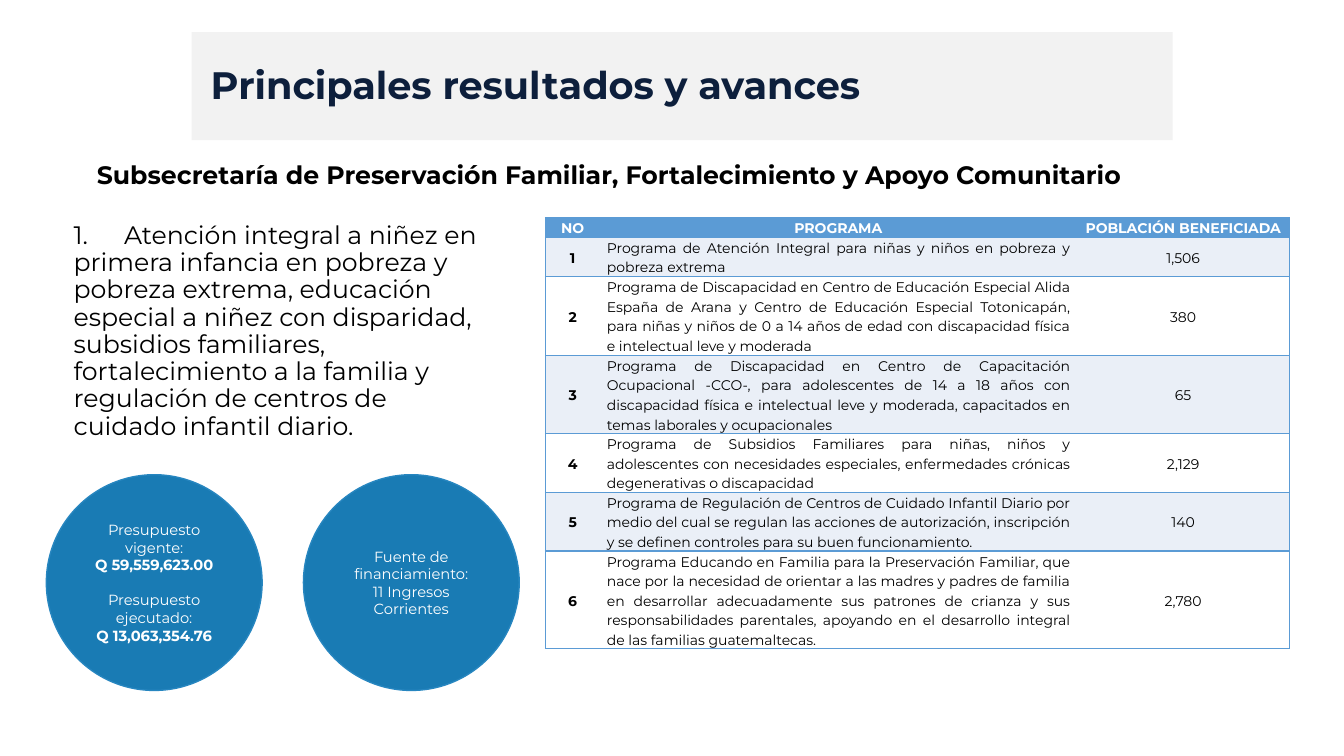
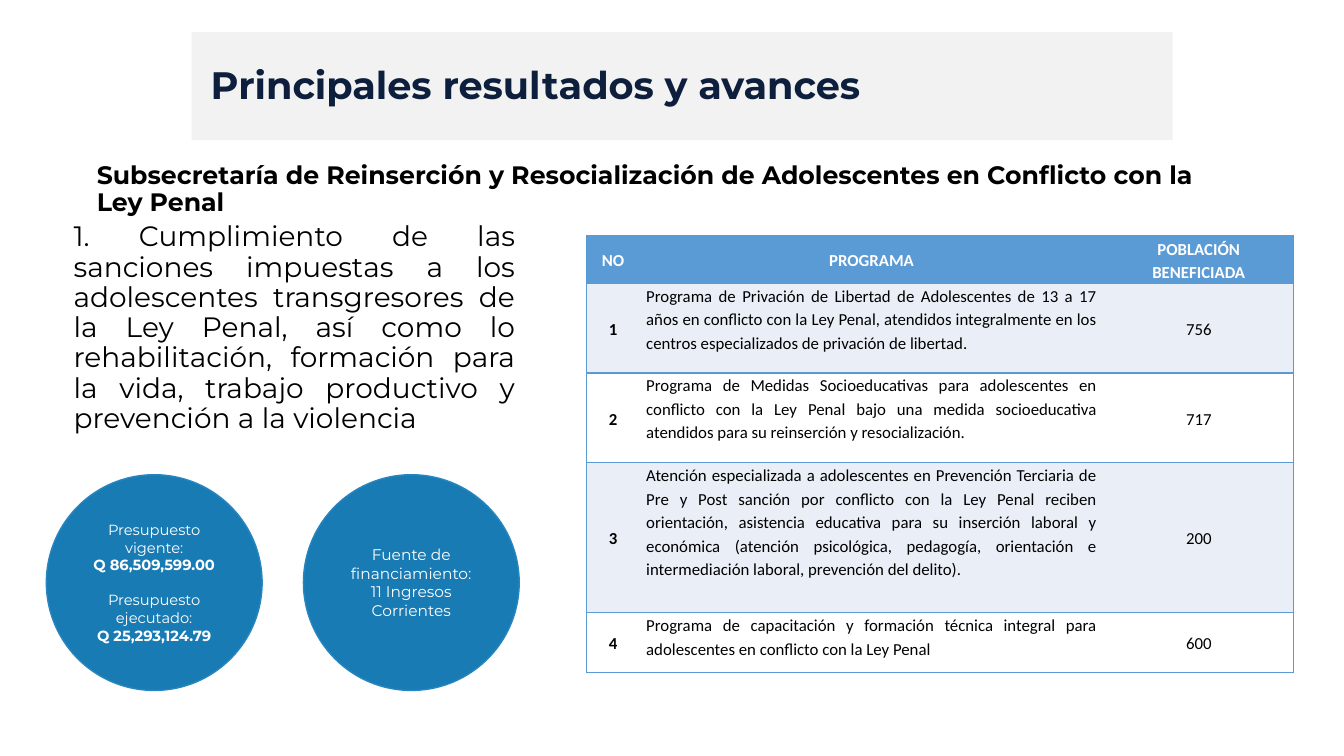
"""Build two slides on results, budgets and people served."""
from lxml import etree
from pptx import Presentation
from pptx import util as u
from pptx.dml.color import RGBColor
from pptx.enum import shapes, text
from pptx.oxml import ns

HUES = {
    "band": "F2F2F2", "title": "0D1F3C", "text": "000000", "white": "FFFFFF",
    "disc": "197BB4", "rim": "2786C0", "grid": "5B9BD5", "tint": "EAEFF7",
}
FACE = "Montserrat"
MID, TOP = text.MSO_ANCHOR.MIDDLE, text.MSO_ANCHOR.TOP
LEFT, CENTER, JUST = text.PP_ALIGN.LEFT, text.PP_ALIGN.CENTER, text.PP_ALIGN.JUSTIFY
HEADS = ["NO", "PROGRAMA", "POBLACIÓN BENEFICIADA"]

FAMILY = {
    "head": "Subsecretaría de Preservación Familiar, Fortalecimiento y Apoyo Comunitario",
    "point": "1.\tAtención integral a niñez en primera infancia en pobreza y pobreza extrema, educación especial a niñez con disparidad, subsidios familiares, fortalecimiento a la familia y regulación de centros de cuidado infantil diario.",
    "point_box": (0.63, 2.16, 4.32, 2.28), "point_size": 18, "align": LEFT,
    "sums": ("Q 59,559,623.00", "Q 13,063,354.76"), "fund_size": 10.5,
    "grid_at": (5.41, 2.16), "cols": [0.54, 4.73, 2.11],
    "tall": [0.19, 0.39, 0.78, 0.78, 0.58, 0.58, 0.97],
    "face": FACE, "size": 10, "anchor": MID,
    "rows": [
        ("Programa de Atención Integral para niñas y niños en pobreza y pobreza extrema", "1,506"),
        ("Programa de Discapacidad en Centro de Educación Especial Alida España de Arana y Centro de Educación Especial Totonicapán, para niñas y niños de 0 a 14 años de edad con discapacidad física e intelectual leve y moderada", "380"),
        ("Programa de Discapacidad en Centro de Capacitación Ocupacional -CCO-, para adolescentes de 14 a 18 años con discapacidad física e intelectual leve y moderada, capacitados en temas laborales y ocupacionales", "65"),
        ("Programa de Subsidios Familiares para niñas, niños y adolescentes con necesidades especiales, enfermedades crónicas degenerativas o discapacidad", "2,129"),
        ("Programa de Regulación de Centros de Cuidado Infantil Diario por medio del cual se regulan las acciones de autorización, inscripción y se definen controles para su buen funcionamiento.", "140"),
        ("Programa Educando en Familia para la Preservación Familiar, que nace por la necesidad de orientar a las madres y padres de familia en desarrollar adecuadamente sus patrones de crianza y sus responsabilidades parentales, apoyando en el desarrollo integral de las familias guatemaltecas.", "2,780"),
    ],
}
YOUTH = {
    "head": "Subsecretaría de Reinserción y Resocialización de Adolescentes en Conflicto con la Ley Penal",
    "point": "1. Cumplimiento de las sanciones impuestas a los adolescentes transgresores de la Ley Penal, así como lo rehabilitación, formación para la vida, trabajo productivo y prevención a la violencia",
    "point_box": (0.63, 2.16, 4.58, 2.28), "point_size": 20, "align": JUST,
    "sums": ("Q 86,509,599.00", "Q 25,293,124.79"), "fund_size": 11,
    "grid_at": (5.82, 2.34), "cols": [0.52, 4.61, 1.88],
    "tall": [0.47, 0.89, 0.89, 1.49, 0.59],
    "face": "Calibri", "size": 12, "anchor": TOP,
    "rows": [
        ("Programa de Privación de Libertad de Adolescentes de 13 a 17 años en conflicto con la Ley Penal, atendidos integralmente en los centros especializados de privación de libertad.", "756"),
        ("Programa de Medidas Socioeducativas para adolescentes en conflicto con la Ley Penal bajo una medida socioeducativa atendidos para su reinserción y resocialización.", "717"),
        ("Atención especializada a adolescentes en Prevención Terciaria de Pre y Post sanción por conflicto con la Ley Penal reciben orientación, asistencia educativa para su inserción laboral y económica (atención psicológica, pedagogía, orientación e intermediación laboral, prevención del delito).", "200"),
        ("Programa de capacitación y formación técnica integral para adolescentes en conflicto con la Ley Penal", "600"),
    ],
}


def hue(name):
    """Return the named colour."""
    return RGBColor.from_string(HUES[name])


def inch(box):
    """Turn a box of numbers into lengths."""
    return [u.Inches(n) for n in box]


def style(para, size, color, bold=False, face=FACE, align=LEFT, lead=1.0):
    """Format one whole paragraph."""
    para.alignment, para.line_spacing, = align, lead
    font = para.font
    font.name, font.size, font.bold = face, u.Pt(size), bold
    font.color.rgb = hue(color)


def place(holder, box, words, anchor, **look):
    """Move a placeholder to a box and fill it with plain text."""
    holder.left, holder.top, holder.width, holder.height = inch(box)
    frame = holder.text_frame
    frame.text, frame.word_wrap = words, True
    frame.auto_size, frame.vertical_anchor = text.MSO_AUTO_SIZE.NONE, anchor
    para = frame.paragraphs[0]
    para.space_before = u.Pt(0)
    props = para._p.get_or_add_pPr()
    props.set("marL", "0")
    props.set("indent", "0")
    etree.SubElement(props, ns.qn("a:buNone"))
    if "\t" in words:
        tabs = etree.SubElement(props, ns.qn("a:tabLst"))
        etree.SubElement(tabs, ns.qn("a:tab"), pos=str(u.Inches(0.31)), algn="l")
    style(para, lead=0.9, **look)


def shape(slide, kind, box, fill, rim=None):
    """Add a flat preset shape."""
    item = slide.shapes.add_shape(kind, *inch(box))
    item.shadow.inherit = False
    item.fill.solid()
    item.fill.fore_color.rgb = hue(fill)
    if rim:
        item.line.color.rgb = hue(rim)
        item.line.width = u.Pt(1)
    else:
        item.line.fill.background()
    return item


def header(slide, box):
    """Place the title on its band."""
    left, top, width, height = box
    band = shape(slide, shapes.MSO_SHAPE.RECTANGLE, box, "band")
    slide.shapes._spTree.insert(2, band._element)
    place(slide.shapes.title, (left + 0.09, top + 0.18, width - 1.04, height - 0.34),
          "Principales resultados y avances", MID, size=27.3, color="title", bold=True)


def disc(slide, box, lines, size, gap=0):
    """Add a circle with centred lines given as text and weight."""
    frame = shape(slide, shapes.MSO_SHAPE.OVAL, box, "disc", "rim").text_frame
    frame.word_wrap, frame.vertical_anchor = True, MID
    for i, (words, bold) in enumerate(lines):
        para = frame.add_paragraph() if i else frame.paragraphs[0]
        para.text = words
        if i and not bold:
            para.space_before = u.Pt(gap)
        style(para, size, "white", bold, align=CENTER)


def funds(slide, box, sums, size):
    """Place the budget and funding circles at both ends of a box."""
    left, top, width, side = box
    budget = [("Presupuesto vigente:", False), (sums[0], True),
              ("Presupuesto ejecutado:", False), (sums[1], True)]
    disc(slide, (left, top, side, side), budget, 10.5, gap=12.5)
    source = [("Fuente de financiamiento:\v11 Ingresos Corrientes", False)]
    disc(slide, (left + width - side, top, side, side), source, size)


def edge(cell, side, shown):
    """Draw or hide one border of a cell."""
    line = etree.SubElement(cell._tc.get_or_add_tcPr(), ns.qn("a:ln" + side), w="12700")
    if shown:
        fill = etree.SubElement(line, ns.qn("a:solidFill"))
        etree.SubElement(fill, ns.qn("a:srgbClr"), val=HUES["grid"])
    else:
        etree.SubElement(line, ns.qn("a:noFill"))


def grid(slide, data):
    """Add the table of programmes."""
    cols, tall = data["cols"], data["tall"]
    rows = [HEADS] + [(str(i), *row) for i, row in enumerate(data["rows"], 1)]
    box = (*data["grid_at"], sum(cols), sum(tall))
    table = slide.shapes.add_table(len(rows), len(cols), *inch(box)).table
    table.first_row = table.horz_banding = False
    for col, width in zip(table.columns, cols):
        col.width = u.Inches(width)
    for r, row in enumerate(rows):
        table.rows[r].height = u.Inches(tall[r])
        for c, words in enumerate(row):
            cell, prose = table.cell(r, c), r > 0 and c == 1
            cell.text = words
            cell.margin_left = cell.margin_right = u.Inches(0.07)
            cell.margin_top = cell.margin_bottom = 0
            cell.vertical_anchor = data["anchor"] if prose else MID
            for side, shown in (("L", c == 0), ("R", c == 2), ("T", True), ("B", True)):
                edge(cell, side, shown)
            cell.fill.solid()
            cell.fill.fore_color.rgb = hue("grid" if r == 0 else "tint" if r % 2 else "white")
            style(cell.text_frame.paragraphs[0], data["size"], "text" if r else "white",
                  r == 0 or c == 0, data["face"], JUST if prose else CENTER, 1.15)


def report(deck, data):
    """Add one results slide."""
    slide = deck.slides.add_slide(deck.slide_layouts[3])
    header(slide, (1.9, 0.32, 9.73, 1.07))
    head, point = slide.placeholders[1], slide.placeholders[2]
    place(head, (0.86, 1.56, 11.5, 0.61), data["head"], TOP,
          size=18, color="text", bold=True)
    place(point, data["point_box"], data["point"], TOP,
          size=data["point_size"], color="text", align=data["align"])
    funds(slide, (0.46, 4.71, 4.69, 2.14), data["sums"], data["fund_size"])
    grid(slide, data)


def main():
    """Build and save the deck."""
    deck = Presentation()
    deck.slide_width, deck.slide_height = inch((13.33, 7.5))
    for data in (FAMILY, YOUTH):
        report(deck, data)
    deck.save("out.pptx")


if __name__ == "__main__":
    main()
